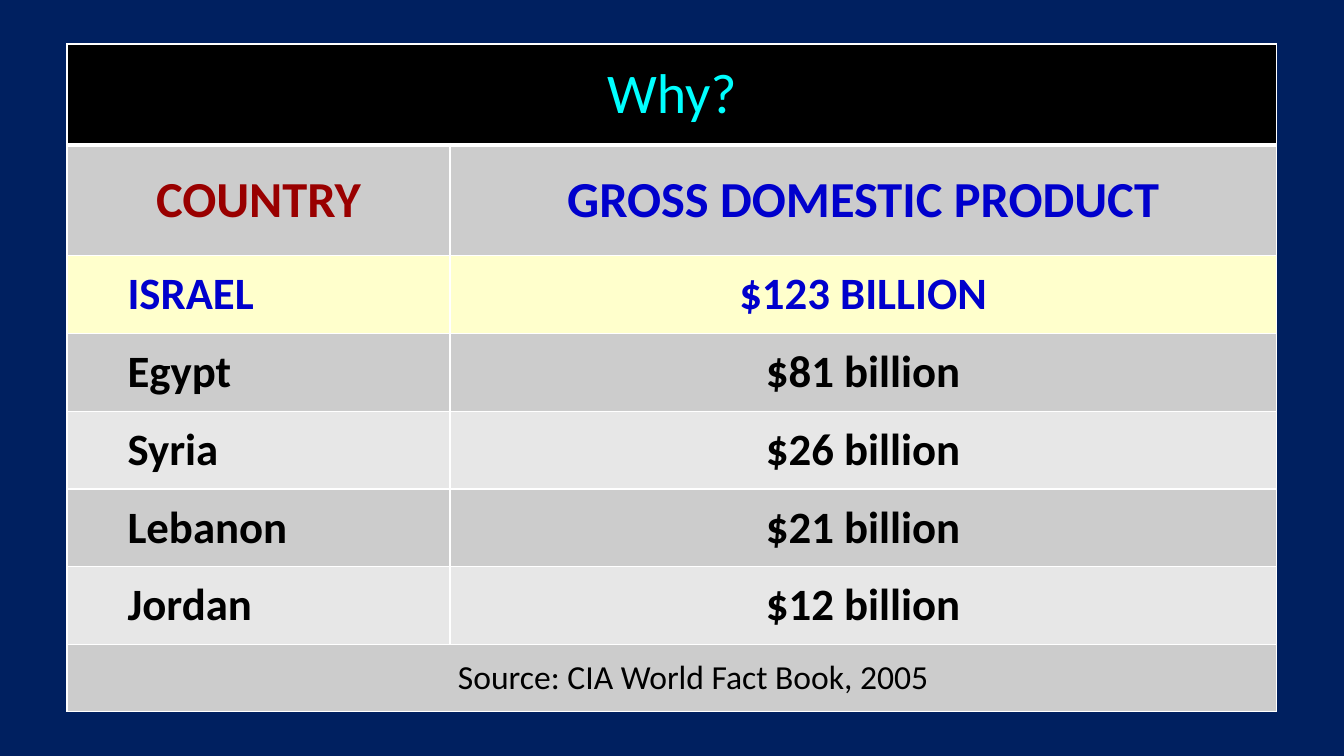
from lxml import etree
from pptx import Presentation
from pptx.dml.color import RGBColor
from pptx.enum.text import MSO_ANCHOR, PP_ALIGN
from pptx.oxml.ns import qn
from pptx.util import Cm, Pt

CENTER, LEFT = PP_ALIGN.CENTER, PP_ALIGN.LEFT
MIDDLE = MSO_ANCHOR.MIDDLE

COLORS = {
    "navy": "002060", "white": "FFFFFF", "black": "000000", "cyan": "00FFFF",
    "red": "990000", "blue": "0000CC", "yellow": "FFFFCC",
    "dark_band": "CCCCCC", "light_band": "E7E7E7",
}
FONT = "Calibri"
INDENT = Cm(1.27)
TABLE_BOX = (Cm(1.69), Cm(1.11), Cm(30.48), Cm(16.82))
COLUMN_WIDTHS = (9.65, 20.83)
TITLE_HEIGHT, HEADING_HEIGHT, COUNTRY_HEIGHT, SOURCE_HEIGHT = 2.54, 2.79, 1.96, 1.69

HEADINGS = (("COUNTRY", "red"), ("GROSS DOMESTIC PRODUCT", "blue"))
COUNTRIES = (
    ("ISRAEL", "$123 BILLION"),
    ("Egypt", "$81 billion"),
    ("Syria", "$26 billion"),
    ("Lebanon", "$21 billion"),
    ("Jordan", "$12 billion"),
)


def rgb(name):
    return RGBColor.from_string(COLORS[name])


def style_cell(cell, fill, top=1, bottom=1):
    """Fill a cell and draw its white borders."""
    cell.fill.solid()
    cell.fill.fore_color.rgb = rgb(fill)
    cell.vertical_anchor = MIDDLE
    properties = cell._tc.get_or_add_tcPr()
    sides = {"a:lnL": 1, "a:lnR": 1, "a:lnT": top, "a:lnB": bottom}
    for position, (side, width) in enumerate(sides.items()):
        line = etree.Element(qn(side), w=str(Pt(width)))
        line_fill = etree.SubElement(line, qn("a:solidFill"))
        etree.SubElement(line_fill, qn("a:srgbClr"), val=COLORS["white"])
        properties.insert(position, line)


def write_cell(cell, text, size, color, bold=True, align=CENTER, indented=False):
    paragraph = cell.text_frame.paragraphs[0]
    paragraph.alignment = align
    properties = paragraph._p.get_or_add_pPr()
    if indented:
        paragraph.level = 1
        properties.set("marL", str(INDENT))
        properties.set("indent", "0")
    # Space before as a share of the line height
    spacing = etree.SubElement(properties, qn("a:spcBef"))
    etree.SubElement(spacing, qn("a:spcPct"), val="20000")
    run = paragraph.add_run()
    run.text = text
    for name, value in {"name": FONT, "size": Pt(size), "bold": bold}.items():
        setattr(run.font, name, value)
    run.font.color.rgb = rgb(color)


def add_gdp_table(slide, box):
    heights = (TITLE_HEIGHT, HEADING_HEIGHT,
               *[COUNTRY_HEIGHT] * len(COUNTRIES), SOURCE_HEIGHT)
    last = len(heights) - 1
    table = slide.shapes.add_table(len(heights), len(COLUMN_WIDTHS), *box).table
    for column, width in zip(table.columns, COLUMN_WIDTHS):
        column.width = Cm(width)

    # Row heights, bands and borders
    special_fills = {0: "black", 2: "yellow"}
    for index, height in enumerate(heights):
        table.rows[index].height = Cm(height)
        band = "dark_band" if index % 2 else "light_band"
        for cell in table.rows[index].cells:
            style_cell(cell, special_fills.get(index, band),
                       top=3 if index == 1 else 1, bottom=3 if index == 0 else 1)

    # Title and source span both columns
    for index in (0, last):
        table.cell(index, 0).merge(table.cell(index, 1))
    write_cell(table.cell(0, 0), "Why?", 40, "cyan", bold=False)
    write_cell(table.cell(last, 0), "Source: CIA World Fact Book, 2005 ", 24,
               "black", bold=False, indented=True)

    # Column headings
    for column, (heading, color) in enumerate(HEADINGS):
        write_cell(table.cell(1, column), heading, 36, color)

    # Countries, the first one highlighted
    for index, (country, product) in enumerate(COUNTRIES, start=2):
        color = "blue" if index == 2 else "black"
        write_cell(table.cell(index, 0), country, 32, color, align=LEFT, indented=True)
        write_cell(table.cell(index, 1), product, 32, color)


def main():
    presentation = Presentation()
    presentation.slide_width, presentation.slide_height = Cm(33.87), Cm(19.05)
    slide = presentation.slides.add_slide(presentation.slide_layouts[6])
    slide.background.fill.solid()
    slide.background.fill.fore_color.rgb = rgb("navy")
    add_gdp_table(slide, TABLE_BOX)
    presentation.save("out.pptx")


if __name__ == "__main__":
    main()
